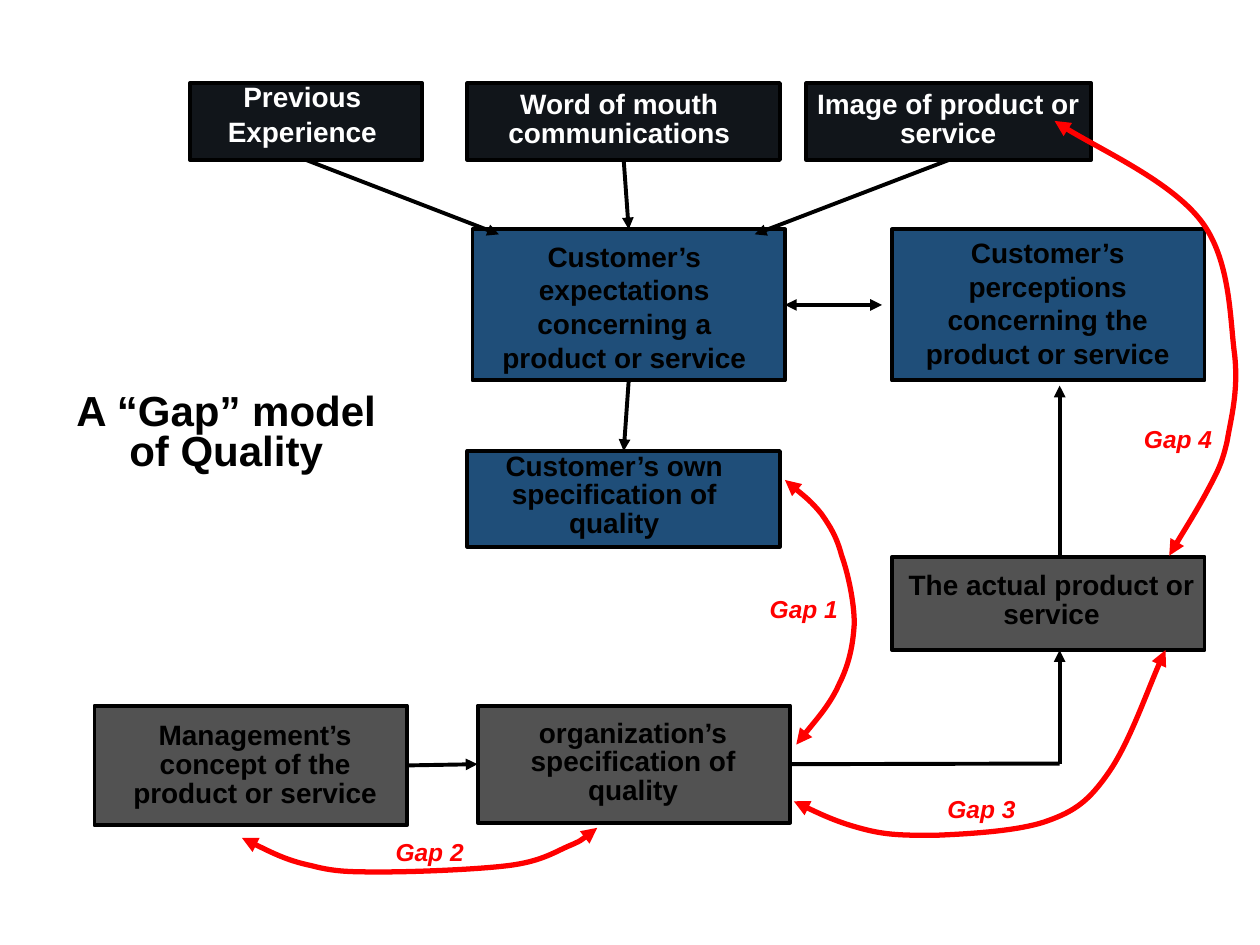
from itertools import chain

from lxml.etree import SubElement
from pptx import Presentation
from pptx.dml.color import RGBColor
from pptx.enum.shapes import MSO_CONNECTOR, MSO_SHAPE
from pptx.enum.text import MSO_ANCHOR, MSO_AUTO_SIZE, PP_ALIGN
from pptx.oxml.ns import qn
from pptx.util import Inches, Pt

BLACK = RGBColor(0x00, 0x00, 0x00)
WHITE = RGBColor(0xFF, 0xFF, 0xFF)
NAVY = RGBColor(0x11, 0x15, 0x1A)
BLUE = RGBColor(0x1F, 0x4E, 0x79)
GRAY = RGBColor(0x52, 0x52, 0x52)
RED = RGBColor(0xFF, 0x00, 0x00)

COLUMNS, ROWS = 100, 75
SLIDE_W, SLIDE_H = Inches(10), Inches(7.5)
TOP, LEFT, BOTTOM, RIGHT = range(4)
BOX_W = 24.8


def grid(origin, x, y):
    return (round((origin[0] + x) * SLIDE_W / COLUMNS),
            round((origin[1] + y) * SLIDE_H / ROWS))


def place(origin, x, y, w, h):
    return grid(origin, x, y) + grid((0, 0), w, h)


def write(shape, lines, spacing, size=16, color=BLACK, italic=False):
    tf = shape.text_frame
    frame = {"word_wrap": True, "auto_size": MSO_AUTO_SIZE.NONE,
             "vertical_anchor": MSO_ANCHOR.TOP}
    for name, value in frame.items():
        setattr(tf, name, value)
    tf.text = lines
    paragraph = {"alignment": PP_ALIGN.CENTER, "line_spacing": spacing,
                 "space_before": Pt(size / 2)}
    font = {"name": "Arial", "size": Pt(size), "bold": True, "italic": italic}
    for p in tf.paragraphs:
        for name, value in paragraph.items():
            setattr(p, name, value)
        for r in p.runs:
            for name, value in font.items():
                setattr(r.font, name, value)
            r.font.color.rgb = color


def add_box(s, origin, box, text_box, text, fill, spacing=0.85, color=BLACK):
    sp = s.shapes.add_shape(MSO_SHAPE.RECTANGLE, *place(origin, *box))
    sp.shadow.inherit = False
    sp.fill.solid()
    sp.fill.fore_color.rgb = fill
    sp.line.color.rgb = BLACK
    sp.line.width = Pt(2.25)
    label = s.shapes.add_textbox(*place(origin, *text_box))
    write(label, text, spacing, color=color)
    return sp


def style_line(shape, color, width, ends):
    shape.line.color.rgb = color
    shape.line.width = Pt(width)
    for end in ends:
        SubElement(shape.line._get_or_add_ln(), qn(f"a:{end}"), type="triangle")


def add_arrow(s, start=(0, 0), end=(0, 0), begin_at=None, end_at=None,
              ends=("tailEnd",)):
    line = s.shapes.add_connector(
        MSO_CONNECTOR.STRAIGHT, *grid((0, 0), *start), *grid((0, 0), *end))
    if begin_at:
        line.begin_connect(*begin_at)
    if end_at:
        line.end_connect(*end_at)
    style_line(line, BLACK, 2.25, ends)
    SubElement(line._element.spPr, qn("a:effectLst"))


def add_title(s, origin):
    title = s.shapes.title
    title.left, title.top, title.width, title.height = place(origin, 0, 0, 27.5, 7.4)
    write(title, "A “Gap” model of Quality", 0.8, size=24)


def add_influences(s, origin):
    specs = [
        ((0, 0, 18.4, 6.1), (0.6, 0.2, 16.6, 5.7), "Previous\nExperience", 0.6),
        ((22, 0, BOX_W, 6.1), (22.9, 0.2, 22.3, 5.6),
         "Word of mouth communications", 0.85),
        ((48.9, 0, 22.6, 6.1), (48.7, 0.2, 22.9, 5.6),
         "Image of product or service", 0.85),
    ]
    return [add_box(s, origin, box, text_box, text, NAVY, spacing, WHITE)
            for box, text_box, text, spacing in specs]


def add_customer(s, origin):
    specs = [
        ((0.4, 0, BOX_W, 12), (0.4, 0.3, 24.1, 11.8),
         "Customer’s expectations concerning a product or service", 1.0),
        ((33.7, 0, BOX_W, 12), (33.6, 0, 24.9, 11.8),
         "Customer’s perceptions concerning the product or service", 1.0),
        ((0, 17.6, BOX_W, 7.6), (0.5, 17.3, 22.3, 7.9),
         "Customer’s own specification of quality", 0.85),
    ]
    return [add_box(s, origin, box, text_box, text, BLUE, spacing)
            for box, text_box, text, spacing in specs]


def add_organization(s, origin):
    specs = [
        ((0, 11.8, BOX_W, 9.5), (0.5, 12.7, 24.5, 7.9),
         "Management’s concept of the product or service"),
        ((30.4, 11.8, BOX_W, 9.3), (31.6, 12.5, 22.3, 7.9),
         "organization’s specification of quality"),
        ((63.3, 0, BOX_W, 7.4), (63.2, 0.8, 25.5, 5.6),
         "The actual product or service"),
    ]
    return [add_box(s, origin, box, text_box, text, GRAY)
            for box, text_box, text in specs]


def add_arrows(s, influences, customer, organization):
    previous, word, image = influences
    expectations, perceptions, own_spec = customer
    management, org_spec, _ = organization
    both = ("headEnd", "tailEnd")
    add_arrow(s, end=(39.6, 18.6), begin_at=(previous, BOTTOM))
    add_arrow(s, begin_at=(word, BOTTOM), end_at=(expectations, TOP))
    add_arrow(s, end=(59.9, 18.6), begin_at=(image, BOTTOM))
    add_arrow(s, begin_at=(expectations, BOTTOM), end_at=(own_spec, TOP))
    add_arrow(s, begin_at=(management, RIGHT), end_at=(org_spec, LEFT))
    add_arrow(s, end=(70, 24.2), begin_at=(expectations, RIGHT), ends=both)
    add_arrow(s, end=(84.1, 60.6), begin_at=(org_spec, RIGHT), ends=())
    add_arrow(s, (84.1, 60.6), (84.1, 51.6))
    add_arrow(s, (84.1, 44.1), (84.1, 30.6))


def add_gap(s, origin, text, label_at, points):
    start, *rest = [grid(origin, *point) for point in points]
    builder = s.shapes.build_freeform(*start, scale=1.0)
    builder.add_line_segments(rest, close=False)
    curve = builder.convert_to_shape()
    outline = next(curve._element.iter(qn("a:path")))
    segments = outline.findall(qn("a:lnTo"))
    for i in range(0, len(segments), 3):
        bezier = SubElement(outline, qn("a:cubicBezTo"))
        bezier.extend(chain.from_iterable(list(seg) for seg in segments[i:i + 3]))
    for segment in segments:
        outline.remove(segment)
    curve.fill.background()
    curve.shadow.inherit = False
    style_line(curve, RED, 3, ("headEnd", "tailEnd"))
    label = s.shapes.add_textbox(*place(origin, *label_at, 9.4, 3.5))
    write(label, text, 0.8, size=14, color=RED, italic=True)


def add_gaps(s):
    add_gap(s, (62.3, 38.1), "Gap 1", (-3.2, 9), [
        (0.9, 21), (1.5, 20.2), (3.6, 17.8), (4.3, 16.2),
        (5.1, 14.6), (5.4, 13.1), (5.5, 11.4), (5.5, 9.7), (5, 7.4), (4.5, 6),
        (4.1, 4.5), (3.6, 3.7), (2.9, 2.7), (2.1, 1.7), (0.6, 0.5), (0, 0)])
    add_gap(s, (19.2, 65.7), "Gap 2", (10.2, 0.7), [
        (0, 0.8), (1.8, 1.7), (3.6, 2.6), (5.5, 3),
        (7.4, 3.5), (8.6, 3.5), (11.2, 3.5), (13.8, 3.5), (18.7, 3.3), (21.1, 3),
        (23.6, 2.7), (24.7, 2), (25.8, 1.5), (27, 1), (27.6, 0.5), (28.2, 0)])
    add_gap(s, (63, 51.6), "Gap 3", (10.2, 11.4), [
        (0, 12), (1.8, 12.9), (3.6, 13.7), (5.5, 14.2),
        (7.4, 14.7), (8.8, 14.7), (11.2, 14.7), (13.6, 14.6), (17.7, 14.4), (20, 13.6),
        (22.3, 12.8), (23.4, 12), (25, 9.7), (26.6, 7.4), (28.5, 2), (29.5, 0)])
    add_gap(s, (83.7, 9.6), "Gap 4", (5.1, 24), [
        (9.1, 34.5), (9.6, 33.6), (11.3, 30.9), (12.1, 29.4),
        (12.9, 27.9), (13.3, 27.2), (13.7, 25.4), (14, 23.6), (14.6, 21.5), (14.3, 18.6),
        (13.9, 15.7), (14, 11), (11.6, 7.9), (9.2, 4.8), (2.4, 1.7), (0, 0)])


def main():
    prs = Presentation()
    prs.slide_width, prs.slide_height = SLIDE_W, SLIDE_H
    s = prs.slides.add_slide(prs.slide_layouts[5])
    add_title(s, (4.2, 30.8))
    influences = add_influences(s, (15.1, 6.6))
    customer = add_customer(s, (37.1, 18.2))
    organization = add_organization(s, (7.5, 44.2))
    add_arrows(s, influences, customer, organization)
    add_gaps(s)
    prs.save("out.pptx")


if __name__ == "__main__":
    main()
